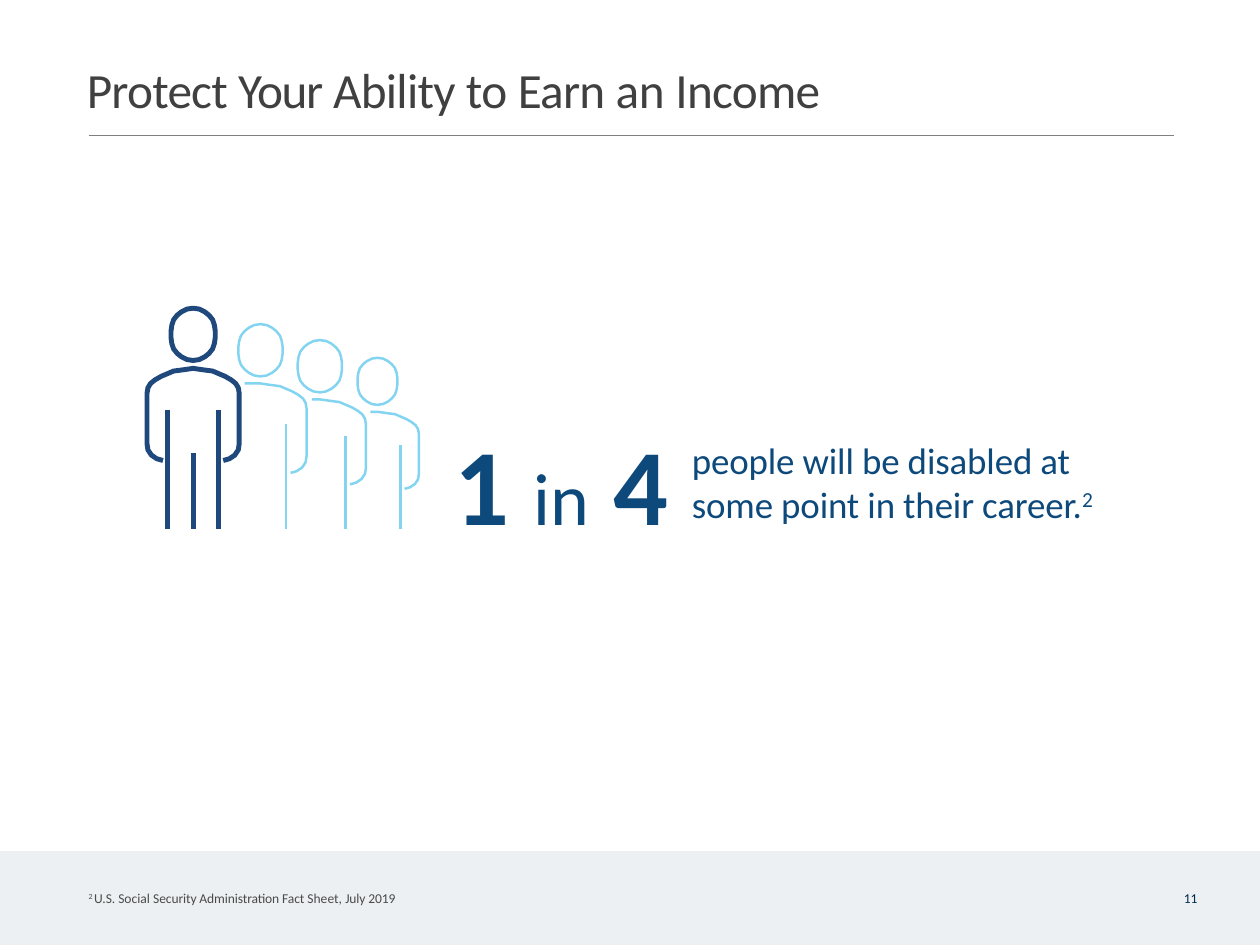
from lxml import etree
from pptx import Presentation
from pptx.dml.color import RGBColor
from pptx.enum.shapes import MSO_CONNECTOR as Connector, MSO_SHAPE as Shape
from pptx.oxml.ns import qn
from pptx.util import Inches, Pt

WHITE = RGBColor(0xFF, 0xFF, 0xFF)
BAND = RGBColor(0xED, 0xF0, 0xF3)
TITLE = RGBColor(0x40, 0x40, 0x40)
RULE = RGBColor(0x7F, 0x7F, 0x7F)
SOURCE = RGBColor(0x4A, 0x4A, 0x4A)
NUMBER = RGBColor(0x00, 0x2B, 0x49)
MESSAGE = RGBColor(0x0E, 0x49, 0x7B)
NAVY = RGBColor(0x1F, 0x49, 0x7D)
SKY = RGBColor(0x83, 0xD4, 0xF1)

FONT = "Calibri"
FLOOR = 5.97

# Offsets from the top centre of a head, down its right side to the middle
HEAD_HEIGHT = 0.59
HEAD_QUARTER = [(0, 0), (0.07, 0.01), (0.13, 0.04), (0.18, 0.08),
                (0.22, 0.13), (0.24, 0.19), (0.25, 0.26)]
# Offsets from the neck to the elbow, and from the wrist to the hand
SHOULDER = [(0, 0), (0.07, 0.01), (0.14, 0.02), (0.22, 0.03), (0.29, 0.06),
            (0.36, 0.09), (0.43, 0.13), (0.48, 0.17), (0.51, 0.22), (0.52, 0.28)]
HAND = [(0.52, -0.19), (0.51, -0.12), (0.47, -0.06), (0.41, -0.02), (0.34, 0)]

# Centre, head top, neck, hand, shoulder start, leg x, leg top, scale
BACK_PEOPLE = [
    (2.94, 3.66, 4.33, 5.34, 2.76, 3.23, 4.79, 1),
    (3.61, 3.84, 4.51, 5.47, 3.52, 3.90, 4.92, 1),
    (4.26, 4.04, 4.65, 5.52, 4.18, 4.52, 5.02, 0.9),
]


def add_text(slide, left, top, width, height, runs, size, color,
             insets=(0, 0, 0, 0)):
    """Each run is (text, spacing in points, options)."""
    box = slide.shapes.add_textbox(Inches(left), Inches(top),
                                   Inches(width), Inches(height))
    frame = box.text_frame
    frame.word_wrap = True
    (frame.margin_left, frame.margin_top,
     frame.margin_right, frame.margin_bottom) = map(Inches, insets)
    para = frame.paragraphs[0]
    for text, spacing, options in runs:
        span = para.add_run()
        span.text = text
        span.font.name = FONT
        span.font.size = Pt(options.get("size", size))
        span.font.bold = options.get("bold", False)
        span.font.color.rgb = color
        properties = span.font._element
        properties.set("spc", str(round(spacing * 100)))
        if options.get("raised"):
            properties.set("baseline", "30000")


def add_line(slide, x1, y1, x2, y2, color, width):
    line = slide.shapes.add_connector(Connector.STRAIGHT, Inches(x1), Inches(y1),
                                      Inches(x2), Inches(y2))
    line.line.color.rgb = color
    line.line.width = Pt(width)
    etree.SubElement(line._element.spPr, qn("a:effectLst"))


def add_outline(slide, points, color, width, close=False):
    corners = [(Inches(x), Inches(y)) for x, y in points]
    builder = slide.shapes.build_freeform(*corners[0])
    builder.add_line_segments(corners[1:], close=close)
    outline = builder.convert_to_shape()
    outline.shadow.inherit = False
    outline.fill.background()
    outline.line.color.rgb = color
    outline.line.width = Pt(width)


def add_band(slide, left, top, width, height, color):
    band = slide.shapes.add_shape(Shape.RECTANGLE, Inches(left), Inches(top),
                                  Inches(width), Inches(height))
    band.shadow.inherit = False
    band.fill.solid()
    band.fill.fore_color.rgb = color
    band.line.fill.background()


def add_head(slide, center, top, scale, color, width):
    right = HEAD_QUARTER + [(x, HEAD_HEIGHT - y) for x, y in reversed(HEAD_QUARTER)]
    left = [(-x, y) for x, y in reversed(right[1:-1])]
    points = [(center + x * scale, top + y * scale) for x, y in right + left]
    add_outline(slide, points, color, width, close=True)


def right_side(center, neck, hand, scale):
    """Points from the neck over the shoulder and down to the hand."""
    return ([(center + x * scale, neck + y * scale) for x, y in SHOULDER]
            + [(center + x * scale, hand + y * scale) for x, y in HAND])


def add_front_person(slide, center):
    right = right_side(center, 4.16, 5.2, 1)
    left = [(2 * center - x, y) for x, y in right[1:]]
    add_outline(slide, right[::-1] + left, NAVY, 4)
    add_head(slide, center, 3.48, 1, NAVY, 4)
    for offset, top in ((0, 5.12), (-0.29, 4.63), (0.29, 4.63)):
        add_line(slide, center + offset, top, center + offset, FLOOR, NAVY, 4)


def add_back_person(slide, center, head, neck, hand, start, leg, leg_top, scale):
    add_line(slide, leg, FLOOR, leg, leg_top, SKY, 2)
    side = right_side(center, neck, hand, scale)
    add_outline(slide, [(start, neck)] + side, SKY, 2)
    add_head(slide, center, head, scale, SKY, 2)


def main():
    deck = Presentation()
    deck.slide_width, deck.slide_height = Inches(14.22), Inches(10.67)
    page = deck.slides.add_slide(deck.slide_layouts[6])
    page.background.fill.solid()
    page.background.fill.fore_color.rgb = WHITE

    # Footer band and title
    add_band(page, 0, 9.61, 14.22, 1.06, BAND)
    add_text(page, 0.97, 0.66, 8.45, 0.69, [
        ("Protect ", -0.6, {}), ("Your ", -1.1, {}), ("Ability ", -0.6, {}),
        ("to ", -0.5, {}), ("Earn ", -0.6, {}), ("an ", -0.3, {}),
        ("Income", -0.6, {}),
    ], 40, TITLE, (0.01, 0.01, 0, 0))
    add_line(page, 1, 1.53, 13.25, 1.53, RULE, 1)

    # Source and page number
    add_text(page, 0.99, 10.03, 3.96, 0.2, [
        ("2 ", -0.1, {"raised": True}), ("U.S. ", -0.1, {}), ("Social ", 0, {}),
        ("Security Administration Fact ", -0.1, {}), ("Sheet, ", 0, {}),
        ("July 2019", -0.1, {}),
    ], 11, SOURCE, (0.01, 0.02, 0, 0))
    add_text(page, 13.33, 10.03, 0.19, 0.2, [("11", 0, {})], 11, NUMBER,
             (0.03, 0.02, 0, 0))

    # One person in front of three
    add_front_person(page, 2.18)
    for person in BACK_PEOPLE:
        add_back_person(page, *person)

    # Key figure and message
    add_text(page, 5.12, 4.71, 3.97, 1.13, [
        ("1 ", -0.1, {"bold": True}), ("in", -0.1, {"size": 60}),
        (" ", -0.1, {}), ("4", -0.1, {"bold": True}),
    ], 88, MESSAGE, (0.01, 0, 0, 0))
    add_text(page, 7.71, 4.89, 5.2, 1.62, [
        ("people will be disabled at some point in their career.", -0.1, {}),
        ("2", -0.1, {"raised": True}),
    ], 30, MESSAGE, (0.1, 0.05, 0.1, 0.05))

    deck.save("out.pptx")


if __name__ == "__main__":
    main()
